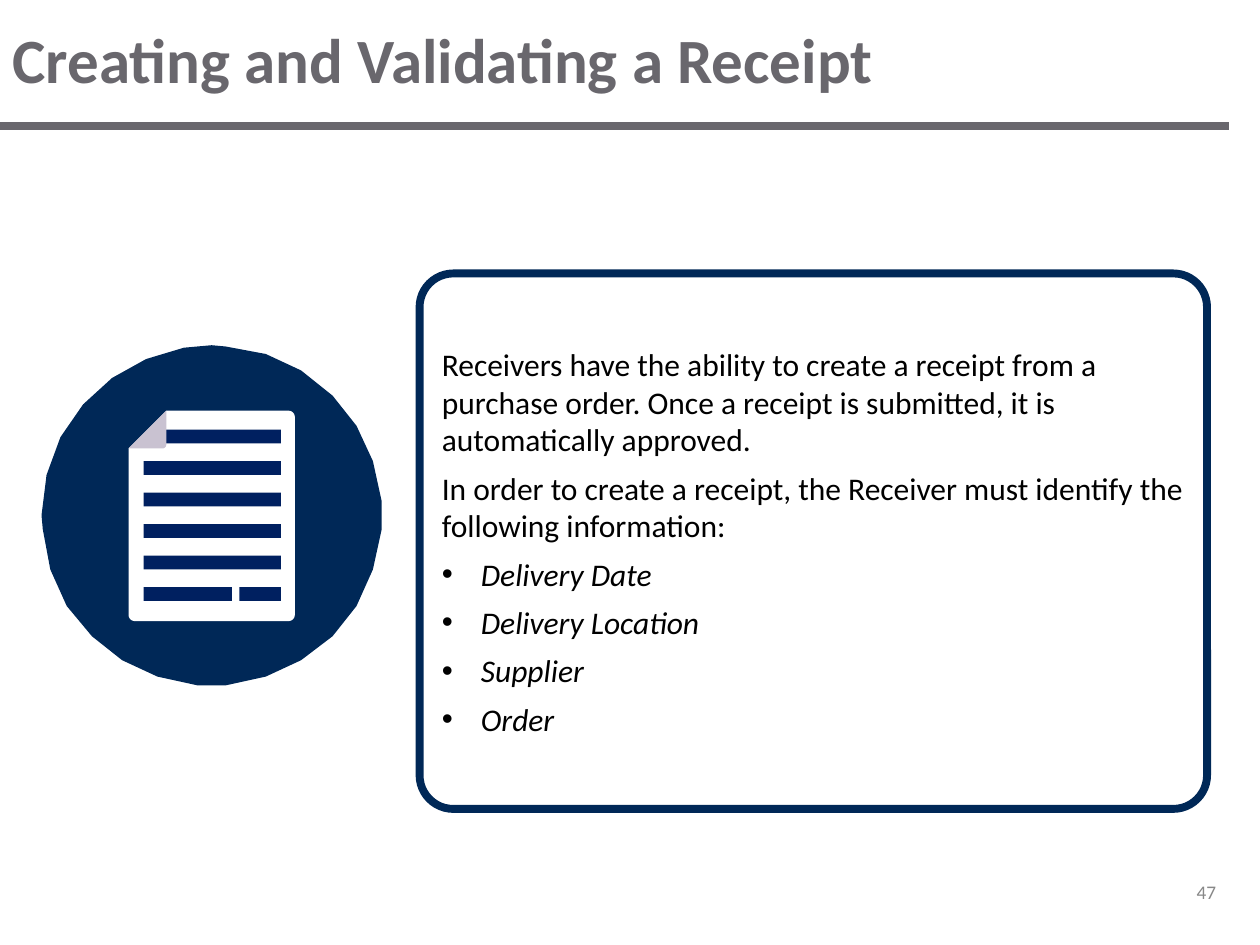
from math import cos, pi, sin

from pptx import Presentation
from pptx.dml.color import RGBColor
from pptx.enum.shapes import MSO_CONNECTOR, MSO_SHAPE
from pptx.enum.text import MSO_ANCHOR, PP_ALIGN
from pptx.oxml.xmlchemy import OxmlElement
from pptx.util import Inches, Pt

STRAIGHT = MSO_CONNECTOR.STRAIGHT
RECT, ROUNDED = MSO_SHAPE.RECTANGLE, MSO_SHAPE.ROUNDED_RECTANGLE
MIDDLE = MSO_ANCHOR.MIDDLE
LEFT, RIGHT = PP_ALIGN.LEFT, PP_ALIGN.RIGHT

COLORS = {
    "heading": "69676D", "navy": "002857", "bar": "002060", "paper": "FFFFFF",
    "fold": "C9C2D1", "body": "000000", "number": "888888",
}

DISC = [
    (1.68, 2.74), (1.46, 2.76), (1.16, 2.85), (0.89, 3), (0.66, 3.21),
    (0.48, 3.47), (0.37, 3.77), (0.33, 4.09), (0.34, 4.2), (0.4, 4.52),
    (0.53, 4.81), (0.73, 5.05), (0.97, 5.24), (1.25, 5.37), (1.57, 5.44),
    (1.79, 5.44), (2.11, 5.37), (2.39, 5.24), (2.64, 5.05), (2.83, 4.81),
    (2.96, 4.52), (3.03, 4.2), (3.03, 3.98), (2.96, 3.66), (2.83, 3.38),
    (2.64, 3.14), (2.39, 2.94), (2.11, 2.81), (1.79, 2.75),
]
INTRO = [
    "Receivers have the ability to create a receipt from a purchase order. "
    "Once a receipt is submitted, it is automatically approved.",
    "In order to create a receipt, the Receiver must identify the following information:",
]
REQUIRED_FIELDS = ["Delivery Date", "Delivery Location", "Supplier", "Order"]


def rgb(name):
    return RGBColor.from_string(COLORS[name])


def corner(cx, cy, radius, start):
    """Points of a quarter circle, turning clockwise from the start angle."""
    angles = [start + step * pi / 12 for step in range(7)]
    return [(cx + radius * cos(a), cy + radius * sin(a)) for a in angles]


class SlideBuilder:
    font = "Calibri"

    def __init__(self, slide):
        self.slide = slide
        self.shapes = slide.shapes

    def add_text(self, paragraph, text, color, **formats):
        run = paragraph.add_run()
        run.text = text
        run.font.color.rgb = rgb(color)
        for name, value in {"name": self.font, **formats}.items():
            setattr(run.font, name, value)

    def title(self, text, box):
        title = self.shapes.title
        for name, value in zip(("left", "top", "width", "height"), box):
            setattr(title, name, Inches(value))
        title.text_frame.vertical_anchor = MIDDLE
        paragraph = title.text_frame.paragraphs[0]
        paragraph.alignment = LEFT
        self.add_text(paragraph, text, "heading", size=Pt(36), bold=True)

    def rule(self, start, end, color, width):
        line = self.shapes.add_connector(STRAIGHT, *map(Inches, start + end))
        line.line.color.rgb = rgb(color)
        line.line.width = Pt(width)
        line._element.spPr.append(OxmlElement("a:effectLst"))

    def label(self, text, box, color, size):
        frame = self.shapes.add_textbox(*map(Inches, box)).text_frame
        frame.word_wrap = True
        frame.vertical_anchor = MIDDLE
        frame.paragraphs[0].alignment = RIGHT
        self.add_text(frame.paragraphs[0], text, color, size=Pt(size))

    def fill(self, shape, color):
        shape.shadow.inherit = False
        shape.fill.solid()
        shape.fill.fore_color.rgb = rgb(color)
        shape.line.fill.background()

    def bar(self, box, color):
        self.fill(self.shapes.add_shape(RECT, *map(Inches, box)), color)

    def outline(self, points, color):
        start, *rest = [(Inches(x), Inches(y)) for x, y in points]
        builder = self.shapes.build_freeform(*start)
        builder.add_line_segments(rest, close=True)
        self.fill(builder.convert_to_shape(), color)

    def bullet(self, paragraph, indent):
        properties = paragraph._p.get_or_add_pPr()
        properties.set("marL", str(Inches(indent)))
        properties.set("indent", str(-Inches(indent)))
        font = OxmlElement("a:buFont")
        font.set("typeface", "Arial")
        mark = OxmlElement("a:buChar")
        mark.set("char", "•")
        properties.extend([font, mark])

    def panel(self, box, intro, items):
        panel = self.shapes.add_shape(ROUNDED, *map(Inches, box))
        panel.adjustments[0] = 0.063
        panel.shadow.inherit = False
        panel.fill.background()
        panel.line.color.rgb = rgb("navy")
        panel.line.width = Pt(4.5)
        frame = panel.text_frame
        frame.word_wrap = True
        frame.vertical_anchor = MIDDLE
        for index, text in enumerate(intro + items):
            is_item = index >= len(intro)
            paragraph = frame.add_paragraph() if index else frame.paragraphs[0]
            paragraph.alignment = LEFT
            paragraph.space_before = Pt(6 if index else 0)
            if is_item:
                self.bullet(paragraph, 0.31)
            self.add_text(paragraph, text, "body", size=Pt(18), italic=is_item)


def main():
    deck = Presentation()
    deck.slide_width, deck.slide_height = Inches(10), Inches(7.5)
    page = SlideBuilder(deck.slides.add_slide(deck.slide_layouts[5]))

    # Heading and page number
    page.rule((0, 1), (9.75, 1), "heading", 5)
    page.title("Creating and Validating a Receipt", (0, 0, 10, 0.92))
    page.label("47", (7.17, 6.88, 2.58, 0.4), "number", 11)

    # Explanation panel
    page.panel((3.33, 2.17, 6.25, 4.25), INTRO, REQUIRED_FIELDS)

    # Receipt icon: disc, sheet, text bars, folded corner
    page.outline(DISC, "navy")
    left, top, right, bottom, radius, fold = 1.02, 3.26, 2.34, 4.93, 0.05, 0.3
    sheet = [(left, top + fold), (left + fold, top)]
    sheet += corner(right - radius, top + radius, radius, -pi / 2)
    sheet += corner(right - radius, bottom - radius, radius, 0)
    sheet += corner(left + radius, bottom - radius, radius, pi / 2)
    page.outline(sheet, "paper")

    bar_rows = [[(1.23, 1)]] + [[(1.14, 1.09)]] * 4 + [[(1.14, 0.7), (1.9, 0.33)]]
    for row, bars in enumerate(bar_rows):
        for bar_left, width in bars:
            page.bar((bar_left, 3.41 + 0.25 * row, width, 0.11), "bar")

    flap = [(left + fold, top), (left, top + fold)]
    flap += corner(left + fold - 0.03, top + fold - 0.03, 0.03, 0)[::-1]
    page.outline(flap, "fold")

    deck.save("out.pptx")


if __name__ == "__main__":
    main()
